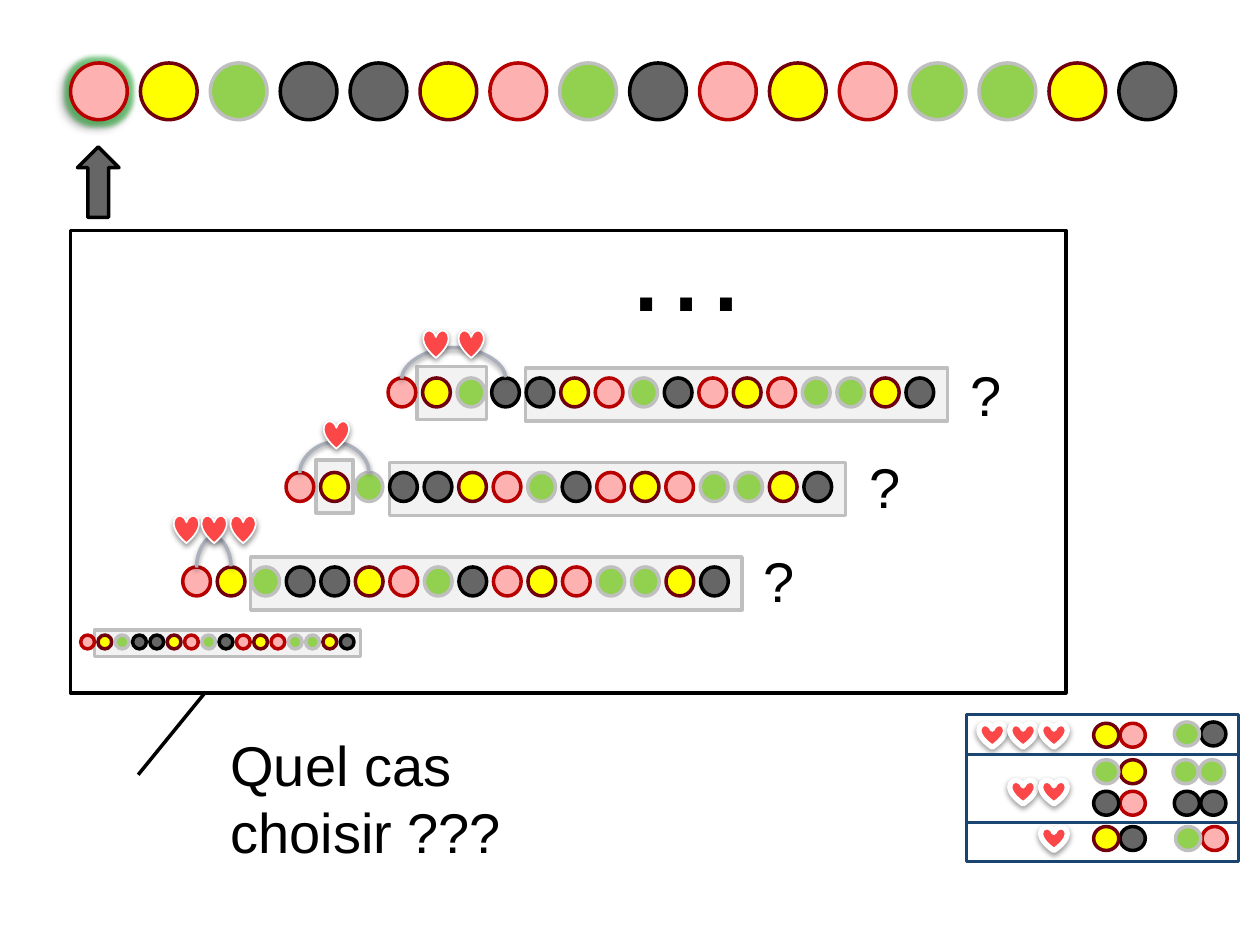
from dataclasses import dataclass
from typing import Optional

from lxml.etree import SubElement
from pptx import Presentation
from pptx.dml.color import RGBColor
from pptx.enum.shapes import MSO_CONNECTOR, MSO_SHAPE
from pptx.enum.text import MSO_AUTO_SIZE
from pptx.oxml.ns import qn
from pptx.util import Inches, Pt

CIRCLE = MSO_SHAPE.OVAL
RECTANGLE = MSO_SHAPE.RECTANGLE
HEART = MSO_SHAPE.HEART
ARROW = MSO_SHAPE.RIGHT_ARROW
CALLOUT = MSO_SHAPE.LINE_CALLOUT_1
STRAIGHT = MSO_CONNECTOR.STRAIGHT
CURVE = MSO_CONNECTOR.CURVE
FIT_SHAPE = MSO_AUTO_SIZE.SHAPE_TO_FIT_TEXT

BLACK = RGBColor(0x00, 0x00, 0x00)
WHITE = RGBColor(0xFF, 0xFF, 0xFF)
GRAY = RGBColor(0x66, 0x66, 0x66)
PALE_GRAY = RGBColor(0xF2, 0xF2, 0xF2)
SILVER = RGBColor(0xBF, 0xBF, 0xBF)
ARC_GRAY = RGBColor(0xAB, 0xB0, 0xBC)
GREEN = RGBColor(0x92, 0xD0, 0x50)
GLOW_GREEN = RGBColor(0x32, 0xB0, 0x40)
YELLOW = RGBColor(0xFF, 0xFF, 0x00)
MAROON = RGBColor(0x70, 0x00, 0x0D)
PINK = RGBColor(0xFD, 0xB1, 0xB1)
RED = RGBColor(0xB8, 0x00, 0x00)
HEART_RED = RGBColor(0xFB, 0x47, 0x47)
NAVY = RGBColor(0x19, 0x44, 0x72)
RULE_NAVY = RGBColor(0x1C, 0x46, 0x72)

BEAD_COLORS = {
    "R": (PINK, RED),
    "Y": (YELLOW, MAROON),
    "G": (GREEN, SILVER),
    "K": (GRAY, BLACK),
}
SEQUENCE = "RYGKKYRGKRYRGGYK"
ARC_HEIGHT = 0.25
ARC_THICKNESS = 0.01


@dataclass(frozen=True)
class Shadow:
    alpha: int
    blur: float
    distance: float
    angle: int


@dataclass(frozen=True)
class Case:
    first: float
    last: float
    top: float
    width: float
    height: float
    frames: tuple[tuple[float, float, float, float], ...]
    partner: int = 0
    hearts: tuple[float, ...] = ()
    heart_top: float = 0
    question: Optional[tuple[float, float]] = None


@dataclass(frozen=True)
class LegendPair:
    left: float
    top: float
    beads: str


SOFT_SHADOW = Shadow(38, 3.1, 1.6, 90)
BEAD_SHADOW = Shadow(40, 4, 3, 135)

CASES = (
    Case(0.64, 2.7, 5.04, 0.11, 0.11, ((0.75, 5, 2.11, 0.21),)),
    Case(1.45, 5.56, 4.5, 0.22, 0.23, ((1.99, 4.42, 3.9, 0.42),),
         1, (1.38, 1.6, 1.83), 4.09, (5.96, 4.29)),
    Case(2.27, 6.38, 3.75, 0.22, 0.23,
         ((2.51, 3.65, 0.29, 0.42), (3.09, 3.67, 3.62, 0.42)),
         2, (2.57,), 3.34, (6.8, 3.54)),
    Case(3.08, 7.19, 3, 0.22, 0.23,
         ((3.31, 2.91, 0.55, 0.42), (4.17, 2.92, 3.35, 0.42)),
         3, (3.36, 3.64), 2.62, (7.6, 2.81)),
)

LEGEND_PAIRS = (
    LegendPair(8.68, 5.74, "YR"), LegendPair(9.32, 5.73, "GK"),
    LegendPair(8.68, 6.03, "GY"), LegendPair(9.31, 6.03, "GG"),
    LegendPair(8.68, 6.28, "KR"), LegendPair(9.32, 6.28, "KK"),
    LegendPair(8.68, 6.56, "YK"), LegendPair(9.33, 6.56, "GR"),
)
LEGEND_HEARTS = ((3, 5.74), (2, 6.19), (1, 6.56))


def add_color(parent, color: RGBColor, alpha: int) -> None:
    node = SubElement(parent, qn("a:srgbClr"), val=str(color))
    SubElement(node, qn("a:alpha"), val=str(alpha * 1000))


def set_effects(shape, shadow: Optional[Shadow] = None, glow: float = 0) -> None:
    effects = SubElement(shape._element.spPr, qn("a:effectLst"))
    if glow:
        halo = SubElement(effects, qn("a:glow"), rad=str(Pt(glow)))
        add_color(halo, GLOW_GREEN, 60)
    if shadow:
        outer = SubElement(effects, qn("a:outerShdw"), blurRad=str(Pt(shadow.blur)),
                           dist=str(Pt(shadow.distance)), dir=str(shadow.angle * 60000))
        add_color(outer, BLACK, shadow.alpha)


def add_figure(shapes, kind, left: float, top: float, width: float, height: float,
               fill: RGBColor, line: RGBColor, weight: float = 2,
               shadow: Optional[Shadow] = None, glow: float = 0):
    shape = shapes.add_shape(kind, Inches(left), Inches(top), Inches(width), Inches(height))
    shape.fill.solid()
    shape.fill.fore_color.rgb = fill
    shape.line.color.rgb = line
    shape.line.width = Pt(weight)
    set_effects(shape, shadow, glow)
    return shape


def add_line(shapes, kind, start: tuple[float, float], end: tuple[float, float],
             color: RGBColor, weight: float, shadow: Optional[Shadow] = None):
    line = shapes.add_connector(kind, *(Inches(value) for value in start + end))
    line.line.color.rgb = color
    line.line.width = Pt(weight)
    set_effects(line, shadow)
    return line


def add_arc(shapes, left: float, right: float, base: float) -> None:
    middle = (left + right) / 2
    half_span = (right - left) / 2
    half_thickness = ARC_THICKNESS / 2
    arc = add_line(shapes, CURVE, (middle + half_thickness, base + half_span),
                   (middle - half_thickness, base - half_span), ARC_GRAY, 2, SOFT_SHADOW)
    properties = arc._element.spPr
    properties.find(qn("a:xfrm")).set("rot", str(90 * 60000))
    bend = round(ARC_HEIGHT / ARC_THICKNESS * 100000)
    guides = properties.find(qn("a:prstGeom")).find(qn("a:avLst"))
    SubElement(guides, qn("a:gd"), name="adj1", fmla=f"val {bend}")


def add_sequence(shapes, first: float, last: float, top: float,
                 width: float, height: float) -> list:
    step = (last - first) / (len(SEQUENCE) - 1)
    return [add_figure(shapes, CIRCLE, first + index * step, top, width, height,
                       *BEAD_COLORS[bead])
            for index, bead in enumerate(SEQUENCE)]


def add_text(shapes, text: str, left: float, top: float, width: float, height: float,
             size: int, wrap: bool = False, right_margin: float = 0.1) -> None:
    box = shapes.add_textbox(Inches(left), Inches(top), Inches(width), Inches(height))
    frame = box.text_frame
    frame.word_wrap = wrap
    frame.auto_size = FIT_SHAPE
    frame.margin_right = Inches(right_margin)
    para = frame.paragraphs[0]
    para.text = text
    para.font.name = "Arial"
    para.font.size = Pt(size)
    para.font.color.rgb = BLACK


def add_case(page, case: Case) -> None:
    shapes = page.shapes.add_group_shape().shapes
    for frame in case.frames:
        add_figure(shapes, RECTANGLE, *frame, PALE_GRAY, SILVER)
    add_sequence(shapes, case.first, case.last, case.top, case.width, case.height)
    if case.partner:
        step = (case.last - case.first) / (len(SEQUENCE) - 1)
        start = case.first + case.width / 2
        add_arc(shapes, start, start + case.partner * step, case.top)
    for left in case.hearts:
        add_figure(shapes, HEART, left, case.heart_top, 0.2, 0.22,
                   HEART_RED, WHITE, 1, SOFT_SHADOW)
    if case.question:
        add_text(shapes, "?", *case.question, 0.41, 0.64, 32)


def add_legend(page) -> None:
    shapes = page.shapes.add_group_shape().shapes
    add_figure(shapes, RECTANGLE, 7.67, 5.67, 2.16, 1.17, WHITE, NAVY, 1.5)
    for pair in LEGEND_PAIRS:
        for index in (1, 0):
            add_figure(shapes, CIRCLE, pair.left + index * 0.21, pair.top, 0.2, 0.19,
                       *BEAD_COLORS[pair.beads[index]])
    for count, top in LEGEND_HEARTS:
        for index in reversed(range(count)):
            add_figure(shapes, HEART, 8.26 - index * 0.245, top, 0.21, 0.19,
                       HEART_RED, WHITE, 3, SOFT_SHADOW)
    for top in (5.99, 6.53):
        add_line(shapes, STRAIGHT, (7.67, top), (9.83, top), RULE_NAVY, 1.5)


def main() -> None:
    deck = Presentation()
    deck.slide_width, deck.slide_height = Inches(10), Inches(7.5)
    page = deck.slides.add_slide(deck.slide_layouts[6])
    callout = add_figure(page.shapes, CALLOUT, 0.56, 1.83, 7.9, 3.67, WHITE, BLACK)
    for index, value in enumerate((1, 0.135, 1.177, 0.068)):
        callout.adjustments[index] = value
    beads = add_sequence(page.shapes, 0.56, 8.88, 0.5, 0.45, 0.45)
    effects = beads[0]._element.spPr.find(qn("a:effectLst"))
    beads[0]._element.spPr.remove(effects)
    set_effects(beads[0], BEAD_SHADOW, 5)
    for case in CASES:
        add_case(page, case)
    add_text(page.shapes, "…", 4.85, 1.42, 0.9, 1.31, 72)
    arrow = add_figure(page.shapes, ARROW, 0.5, 1.28, 0.56, 0.33, GRAY, BLACK)
    arrow.rotation = 270
    add_text(page.shapes, "Quel cas choisir ???", 1.73, 5.75, 3.77, 0.64, 32, True, 1.2)
    add_legend(page)
    deck.save("out.pptx")


if __name__ == "__main__":
    main()
